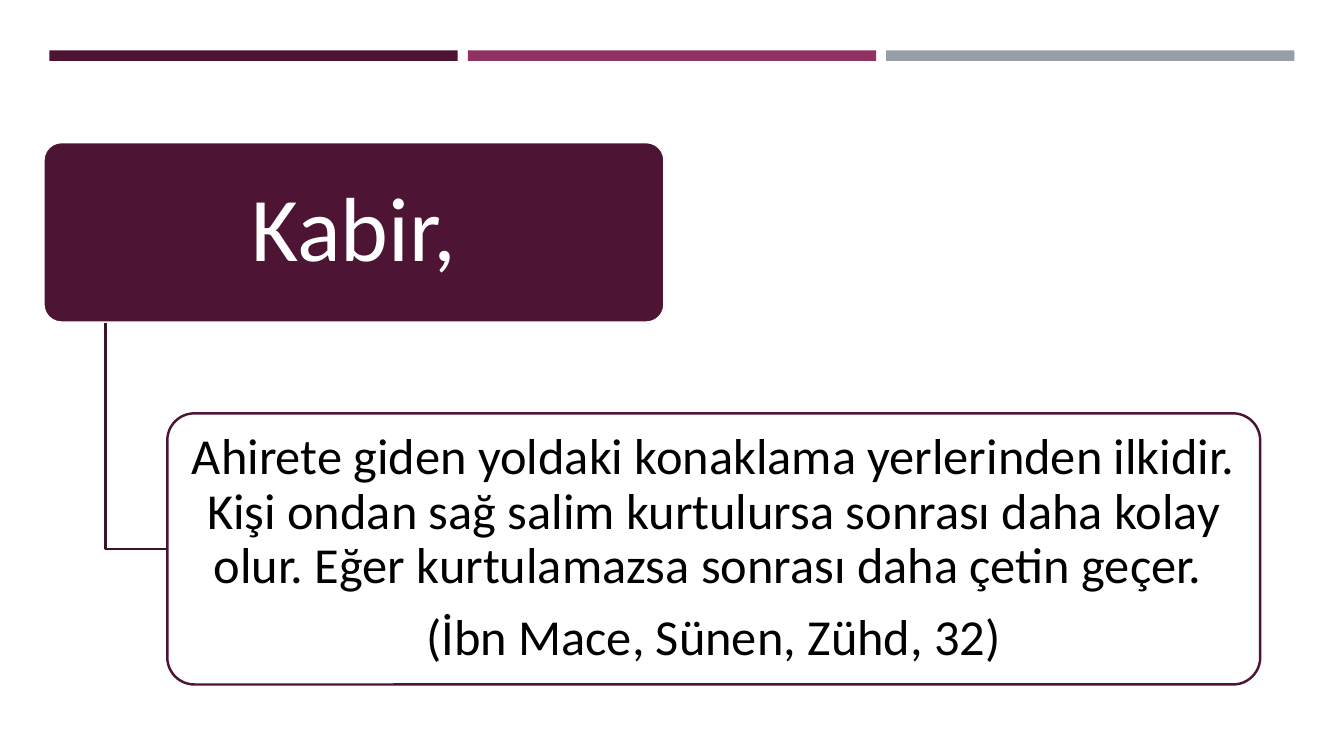
from lxml import etree
from pptx import Presentation
from pptx.dml.color import RGBColor
from pptx.enum.shapes import MSO_SHAPE
from pptx.enum.text import MSO_ANCHOR, PP_ALIGN
from pptx.oxml.ns import qn
from pptx.util import Inches, Pt

COLORS = {"plum": "4D1434", "magenta": "903163", "grey": "969FA7",
          "branch": "3E102A", "white": "FFFFFF", "black": "000000"}
WIDTH, HEIGHT = Inches(13.333), Inches(7.5)
LINE_WIDTH = Pt(1.75)


def color(name):
    """Return the named palette colour."""
    return RGBColor.from_string(COLORS[name])


def box(left, top, width, height):
    """Turn percentages of the slide into a box of lengths."""
    return tuple(round(share * side / 100) for share, side in
                 zip((left, top, width, height), (WIDTH, HEIGHT) * 2))


def add_header_bars(slide, area):
    """Split the area into three coloured bars with equal gaps."""
    left, top, width, height = area
    gap = round(width * 0.008)
    bar_width = (width - 2 * gap) // 3
    for column, name in enumerate(("plum", "magenta", "grey")):
        bar = slide.shapes.add_shape(MSO_SHAPE.RECTANGLE, left + column * (bar_width + gap),
                                     top, bar_width, height)
        bar.shadow.inherit = False
        bar.fill.solid()
        bar.fill.fore_color.rgb = color(name)
        bar.line.fill.background()


def add_card(slide, area, paragraphs, size, fill, outline, ink, insets):
    """Place a rounded card with centred paragraphs."""
    card = slide.shapes.add_shape(MSO_SHAPE.ROUNDED_RECTANGLE, *area)
    card.adjustments[0] = 0.1
    card.shadow.inherit = False
    card.fill.solid()
    card.fill.fore_color.rgb = color(fill)
    card.line.color.rgb = color(outline)
    card.line.width = LINE_WIDTH
    frame = card.text_frame
    frame.word_wrap = True
    frame.vertical_anchor = MSO_ANCHOR.MIDDLE
    frame.margin_left = frame.margin_right = Inches(insets[0])
    frame.margin_top = frame.margin_bottom = Inches(insets[1])
    for index, text in enumerate(paragraphs):
        paragraph = frame.add_paragraph() if index else frame.paragraphs[0]
        paragraph.text = text
        paragraph.alignment = PP_ALIGN.CENTER
        paragraph.line_spacing = 0.9
        paragraph.space_after = Pt(size * 0.35)
        paragraph.font.name = "Calibri"
        paragraph.font.size = Pt(size)
        paragraph.font.color.rgb = color(ink)
    return card


def add_branch(slide, topic, saying):
    """Draw the elbow from under the topic to the side of the saying."""
    stem = topic.left + topic.width // 10
    middle = saying.top + saying.height // 2
    builder = slide.shapes.build_freeform(stem, topic.top + topic.height)
    builder.add_line_segments([(stem, middle), (saying.left, middle)], close=False)
    branch = builder.convert_to_shape()
    branch.shadow.inherit = False
    branch.fill.background()
    branch.line.color.rgb = color("branch")
    branch.line.width = LINE_WIDTH


def add_saying_slide(deck):
    """Build the slide with its bars, topic and saying."""
    slide = deck.slides.add_slide(deck.slide_layouts[6])
    add_header_bars(slide, box(3.68, 6.67, 92.63, 1.4))
    topic = add_card(slide, box(3.23, 18.8, 46.21, 23.87), ["Kabir,"], 65,
                     "plum", "white", "white", (0.14, 0.09))
    saying = add_card(slide, box(12.45, 54.67, 81.32, 35.87), [
        "Ahirete giden yoldaki konaklama yerlerinden ilkidir. Kişi ondan sağ salim "
        "kurtulursa sonrası daha kolay olur. Eğer kurtulamazsa sonrası daha çetin geçer. ",
        "(İbn Mace, Sünen, Zühd, 32)"], 36, "white", "plum", "black", (0.07, 0.05))
    fill_color = saying.fill._xPr.find(qn("a:solidFill"))[0]
    etree.SubElement(fill_color, qn("a:alpha"), val="90000")
    add_branch(slide, topic, saying)


def main():
    """Create and save the presentation."""
    deck = Presentation()
    deck.slide_width, deck.slide_height = WIDTH, HEIGHT
    add_saying_slide(deck)
    deck.save("out.pptx")


if __name__ == "__main__":
    main()
